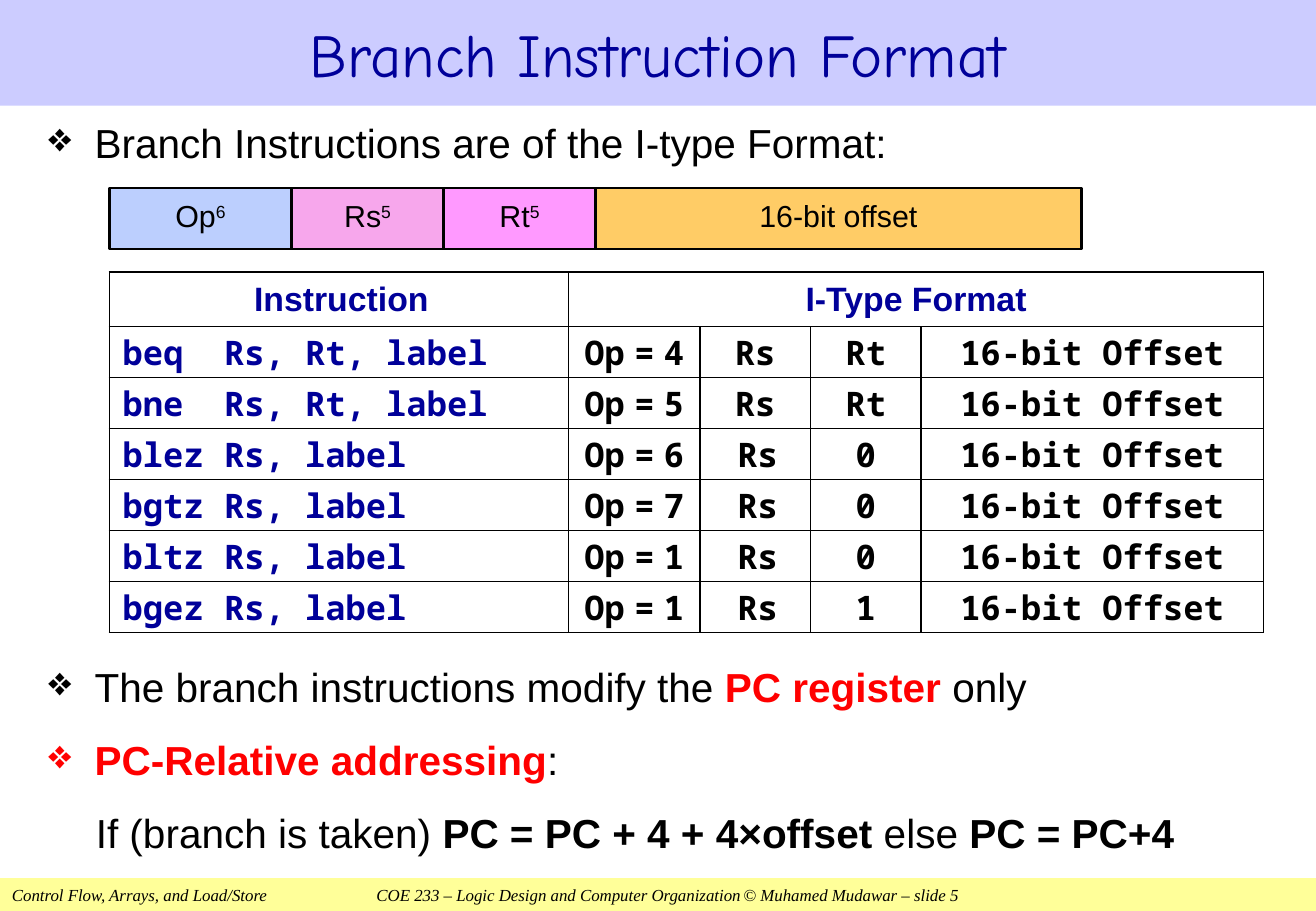
from pptx import Presentation
from pptx.dml.color import RGBColor
from pptx.enum.shapes import MSO_SHAPE
from pptx.enum.text import MSO_ANCHOR, PP_ALIGN
from pptx.oxml.ns import qn
from pptx.util import Inches, Pt
from lxml import etree

RECT = MSO_SHAPE.RECTANGLE
MIDDLE, TOP = MSO_ANCHOR.MIDDLE, MSO_ANCHOR.TOP
LEFT, CENTER = PP_ALIGN.LEFT, PP_ALIGN.CENTER

BLACK = RGBColor(0, 0, 0)
NAVY = RGBColor(0x00, 0x00, 0x99)
RED = RGBColor(0xFF, 0x00, 0x00)
LILAC = RGBColor(0xCC, 0xCC, 0xFF)
YELLOW = RGBColor(0xFF, 0xFF, 0x99)
BLUE = RGBColor(0xBC, 0xCF, 0xFE)
ROSE = RGBColor(0xF7, 0xA7, 0xEC)
PINK = RGBColor(0xFF, 0x99, 0xFF)
ORANGE = RGBColor(0xFF, 0xCC, 0x66)

SANS, MONO, SERIF, COMIC = "Arial", "Noto Sans Mono", "Times New Roman", "Comic Neue"
WIDE, HIGH = 10.83, 7.5

FIELDS = [("Op", "6", BLUE, 6), ("Rs", "5", ROSE, 5),
          ("Rt", "5", PINK, 5), ("16-bit offset", "", ORANGE, 16)]
COLS = [3.78, 1.08, 0.91, 0.91, 2.82]
HEAD, ROW = 0.45, 0.42
CODES = [("beq  Rs, Rt, label", "4", "Rt"), ("bne  Rs, Rt, label", "5", "Rt"),
         ("blez Rs, label", "6", "0"), ("bgtz Rs, label", "7", "0"),
         ("bltz Rs, label", "1", "0"), ("bgez Rs, label", "1", "1")]
INTRO = [(True, [("Branch Instructions are of the I-type Format:", False, BLACK)])]
NOTES = [
    (True, [("The branch instructions modify the ", False, BLACK),
            ("PC register", True, RED), (" only", False, BLACK)]),
    (True, [("PC-Relative addressing", True, RED), (":", False, BLACK)]),
    (False, [("If (branch is taken) ", False, BLACK),
             ("PC = PC + 4 + 4×offset", True, BLACK),
             (" else ", False, BLACK), ("PC = PC+4", True, BLACK)]),
]


def add_run(par, text, size, font=SANS, color=BLACK, bold=False):
    run = par.add_run()
    run.text = text
    run.font.size, run.font.name = Pt(size), font
    run.font.color.rgb, run.font.bold = color, bold
    return run


def add_rect(slide, box, fill, line=None):
    rect = slide.shapes.add_shape(RECT, *map(Inches, box))
    rect.shadow.inherit = False
    rect.fill.solid()
    rect.fill.fore_color.rgb = fill
    if line:
        rect.line.color.rgb, rect.line.width = BLACK, Pt(line)
    else:
        rect.line.fill.background()
    frame = rect.text_frame
    frame.word_wrap, frame.vertical_anchor = True, MIDDLE
    frame.paragraphs[0].alignment = CENTER
    return frame


def add_title(slide, box):
    frame = add_rect(slide, box, LILAC)
    add_run(frame.paragraphs[0], "Branch Instruction Format", 36, COMIC, NAVY)


def add_footer(slide, box):
    frame = add_rect(slide, box, YELLOW)
    par = frame.paragraphs[0]
    par.alignment = LEFT
    tabs = etree.SubElement(par._p.get_or_add_pPr(), qn("a:tabLst"))
    for stop in (3, 6.02):
        etree.SubElement(tabs, qn("a:tab"), pos=str(Inches(stop)), algn="l")
    run = add_run(par, "Control Flow, Arrays, and Load/Store"
                  "\tCOE 233 – Logic Design and Computer Organization"
                  "\t© Muhamed Mudawar – slide 5", 10, SERIF)
    run.font.italic = True


def add_points(slide, box, points, space):
    """Write paragraphs with hanging diamond bullets where asked."""
    frame = slide.shapes.add_textbox(*map(Inches, box)).text_frame
    frame.word_wrap, frame.vertical_anchor = True, TOP
    for i, (mark, runs) in enumerate(points):
        par = frame.add_paragraph() if i else frame.paragraphs[0]
        par.line_spacing = space
        props = par._p.get_or_add_pPr()
        props.set("marL", str(Inches(0.38 if mark else 0.39)))
        if mark:
            props.set("indent", str(-Inches(0.38)))
            etree.SubElement(props, qn("a:buChar"), char="❖")
        for text, bold, color in runs:
            add_run(par, text, 24, SANS, color, bold)


def add_fields(slide, box):
    """Draw the instruction word, each field as wide as its bits."""
    left, top, width, high = box
    unit = width / sum(bits for *_, bits in FIELDS)
    for name, power, fill, bits in FIELDS:
        frame = add_rect(slide, (left, top, bits * unit, high), fill, 1.5)
        frame.margin_left = frame.margin_right = 0
        par = frame.paragraphs[0]
        par.line_spacing = 0.85
        add_run(par, name, 18)
        if power:
            run = add_run(par, power, 18)
            run._r.get_or_add_rPr().set("baseline", "30000")
        left += bits * unit


def fill_cell(cell, parts, color=BLACK, align=CENTER, pads=(0.02, 0.02)):
    """Write (text, font) parts into a cell."""
    cell.vertical_anchor = MIDDLE
    cell.margin_left, cell.margin_right = map(Inches, pads)
    cell.margin_top = cell.margin_bottom = Inches(0.01)
    par = cell.text_frame.paragraphs[0]
    par.alignment = align
    for text, font in parts:
        add_run(par, text, 20, font, color, True)


def edge_cell(cell):
    """Give a cell black borders and no fill."""
    props = cell._tc.get_or_add_tcPr()
    for side in ("lnL", "lnR", "lnT", "lnB"):
        line = etree.SubElement(props, qn("a:" + side), w=str(Pt(1)))
        solid = etree.SubElement(line, qn("a:solidFill"))
        etree.SubElement(solid, qn("a:srgbClr"), val=str(BLACK))
    cell.fill.background()


def add_codes(slide, box):
    frame = slide.shapes.add_table(len(CODES) + 1, len(COLS), *map(Inches, box))
    table = frame.table
    table.first_row = table.horz_banding = False
    for col, width in zip(table.columns, COLS):
        col.width = Inches(width)
    for i, row in enumerate(table.rows):
        row.height = Inches(ROW if i else HEAD)
    for cell in table.iter_cells():
        edge_cell(cell)
    table.cell(0, 1).merge(table.cell(0, 4))
    fill_cell(table.cell(0, 0), [("Instruction", SANS)], NAVY, pads=(0.06, 0.02))
    fill_cell(table.cell(0, 1), [("I-Type Format", SANS)], NAVY)
    for i, (code, op, last) in enumerate(CODES, 1):
        gap = (" ", SANS)
        fill_cell(table.cell(i, 0), [(code, MONO)], NAVY, LEFT, (0.11, 0.11))
        fill_cell(table.cell(i, 1), [("Op", MONO), gap, ("=", MONO), gap, (op, MONO)],
                  pads=(0.06, 0.06))
        fill_cell(table.cell(i, 2), [("Rs", MONO)],
                  pads=(0.02 if last == "Rt" else 0.06, 0.02))
        fill_cell(table.cell(i, 3), [(last, MONO)])
        fill_cell(table.cell(i, 4), [("16-bit Offset", MONO)])


def main():
    deck = Presentation()
    deck.slide_width, deck.slide_height = Inches(WIDE), Inches(HIGH)
    slide = deck.slides.add_slide(deck.slide_layouts[6])
    add_footer(slide, (0, HIGH - 0.27, WIDE, 0.27))
    add_title(slide, (0, 0, WIDE, 0.87))
    add_points(slide, (0.3, 5.2, 10.31, 1.95), NOTES, 1.5)
    add_points(slide, (0.3, 0.92, 10.31, 0.69), INTRO, 1.0)
    add_fields(slide, (0.9, 1.55, 8, 0.5))
    add_codes(slide, (0.9, 2.24, sum(COLS), HEAD + ROW * len(CODES)))
    deck.save("out.pptx")


if __name__ == "__main__":
    main()
